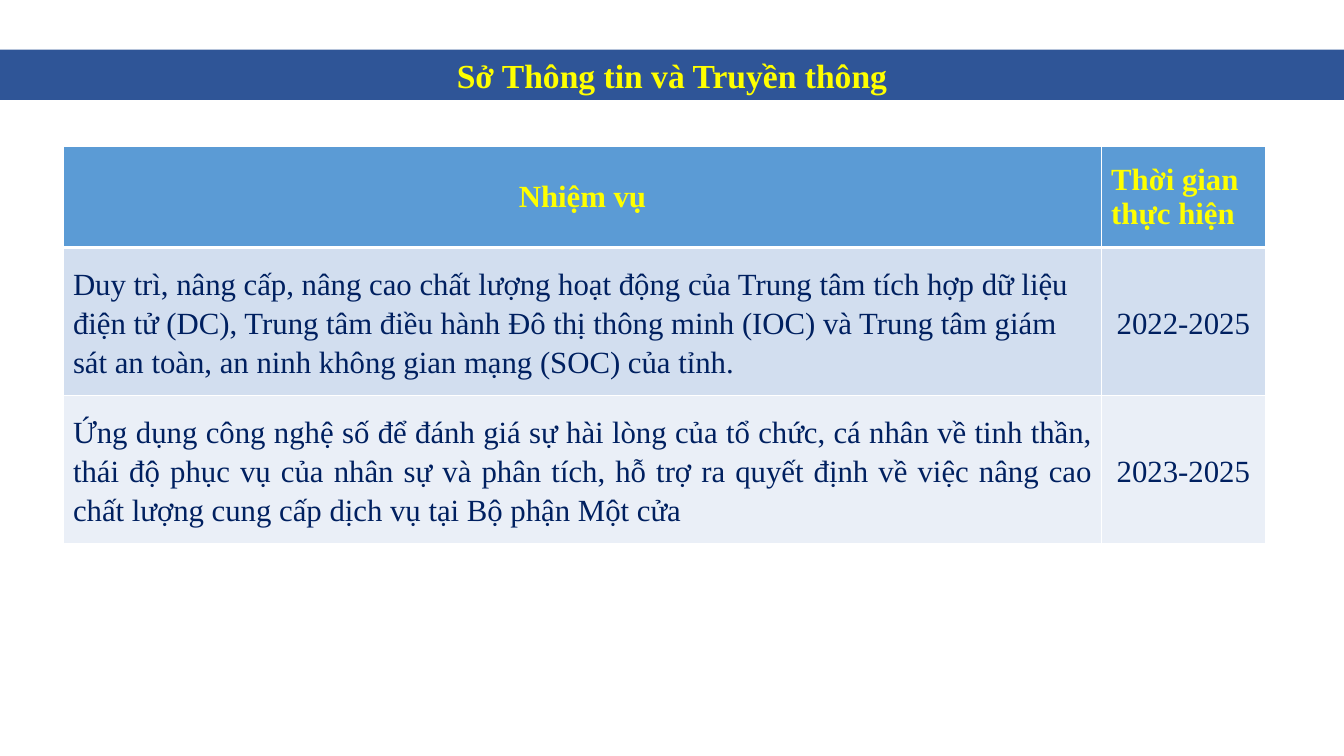
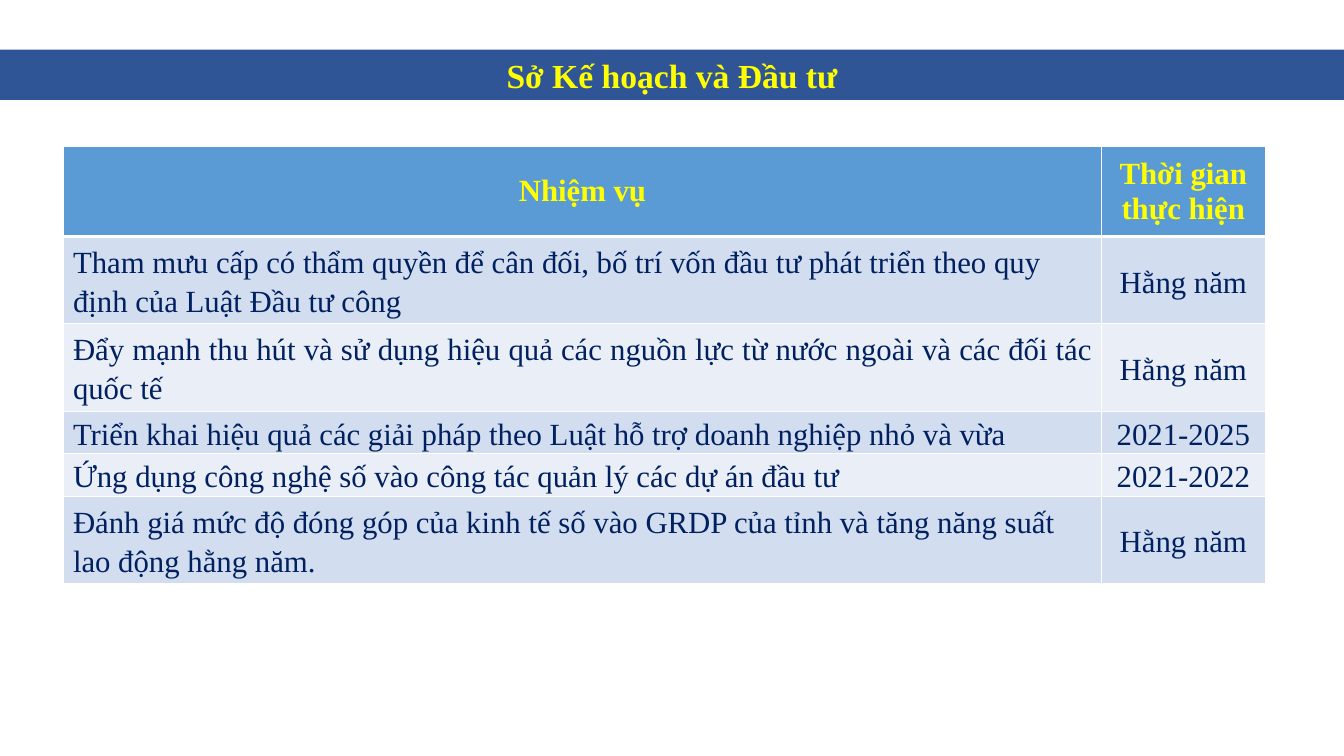
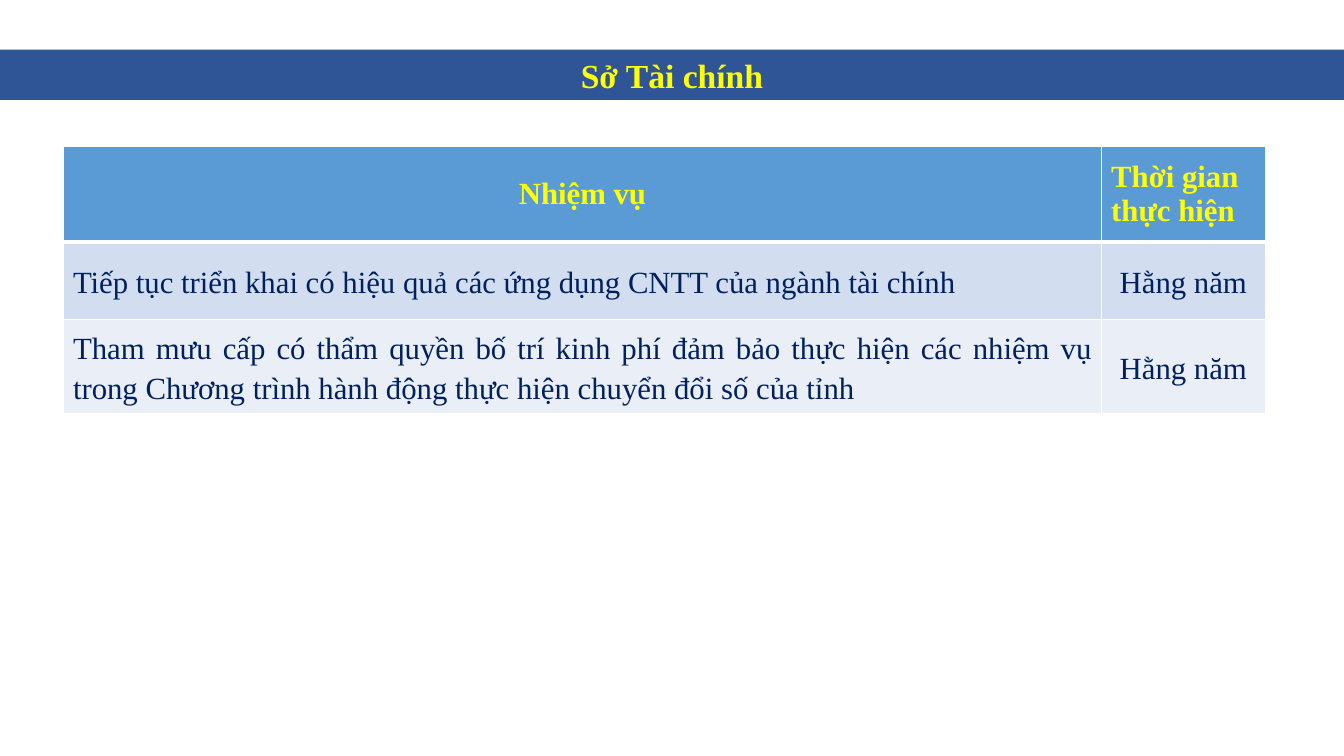
import pptx
import pptx.util
import pptx.dml.color
import pptx.enum.shapes
import pptx.enum.text
import pptx.oxml
import pptx.oxml.ns

Cm = pptx.util.Cm
Pt = pptx.util.Pt
RGBColor = pptx.dml.color.RGBColor
ALIGN = pptx.enum.text.PP_ALIGN
ANCHOR = pptx.enum.text.MSO_ANCHOR

FONT = "Times New Roman"
BAND_BLUE = RGBColor(0x2F, 0x55, 0x97)
HEADER_BLUE = RGBColor(0x5B, 0x9B, 0xD5)
ROW_FILLS = (RGBColor(0xD2, 0xDE, 0xEF), RGBColor(0xEA, 0xEF, 0xF7))
YELLOW = RGBColor(0xFF, 0xFF, 0x00)
GOLD = RGBColor(0xFF, 0xC0, 0x00)
NAVY = RGBColor(0x00, 0x20, 0x60)
WHITE = RGBColor(0xFF, 0xFF, 0xFF)

SLIDE_WIDTH, SLIDE_HEIGHT = Cm(33.87), Cm(19.05)
BAND_BOX = (Cm(0), Cm(1.25), SLIDE_WIDTH, Cm(1.27))
TABLE_LEFT, TABLE_TOP = Cm(1.61), Cm(3.7)
COLUMN_WIDTHS = (Cm(26.14), Cm(4.14))
TASK_MARGIN = Cm(0.23)
HEADINGS = ("Nhiệm vụ", "Thời gian thực hiện")
YEARLY = "Hằng năm"

# Each task: row height in cm, alignment, task, period
DEPARTMENTS = [
    {
        "title": "Sở Thông tin và Truyền thông",
        "header_height": 2.54,
        "period_align": ALIGN.LEFT,
        "tasks": [
            (3.73, ALIGN.LEFT,
             "Duy trì, nâng cấp, nâng cao chất lượng hoạt động của Trung tâm tích hợp "
             "dữ liệu điện tử (DC), Trung tâm điều hành Đô thị thông minh (IOC) và "
             "Trung tâm giám sát an toàn, an ninh không gian mạng (SOC) của tỉnh.",
             "2022-2025"),
            (3.73, ALIGN.JUSTIFY,
             "Ứng dụng công nghệ số để đánh giá sự hài lòng của tổ chức, cá nhân về "
             "tinh thần, thái độ phục vụ của nhân sự và phân tích, hỗ trợ ra quyết "
             "định về việc nâng cao chất lượng cung cấp dịch vụ tại Bộ phận Một cửa",
             "2023-2025"),
        ],
    },
    {
        "title": "Sở Kế hoạch và Đầu tư",
        "header_height": 2.26,
        "period_align": ALIGN.CENTER,
        "tasks": [
            (2.2, ALIGN.LEFT,
             "Tham mưu cấp có thẩm quyền để cân đối, bố trí vốn đầu tư phát triển "
             "theo quy định của Luật Đầu tư công", YEARLY),
            (2.2, ALIGN.JUSTIFY,
             "Đẩy mạnh thu hút và sử dụng hiệu quả các nguồn lực từ nước ngoài và "
             "các đối tác quốc tế", YEARLY),
            (1.07, ALIGN.JUSTIFY,
             "Triển khai hiệu quả các giải pháp theo Luật hỗ trợ doanh nghiệp "
             "nhỏ và vừa", "2021-2025"),
            (1.07, ALIGN.LEFT,
             "Ứng dụng công nghệ số vào công tác quản lý các dự án đầu tư",
             "2021-2022"),
            (2.2, ALIGN.LEFT,
             "Đánh giá mức độ đóng góp của kinh tế số vào GRDP của tỉnh và tăng "
             "năng suất lao động hằng năm.", YEARLY),
        ],
    },
    {
        "title": "Sở Tài chính",
        "header_height": 2.4,
        "period_align": ALIGN.LEFT,
        "tasks": [
            (1.96, ALIGN.LEFT,
             "Tiếp tục triển khai có hiệu quả các ứng dụng CNTT của ngành tài chính",
             YEARLY),
            (2.36, ALIGN.JUSTIFY,
             "Tham mưu cấp có thẩm quyền bố trí kinh phí đảm bảo thực hiện các "
             "nhiệm vụ trong Chương trình hành động thực hiện chuyển đổi số của tỉnh",
             YEARLY),
        ],
    },
]


def line_xml(tag, color, width):
    return pptx.oxml.parse_xml(
        f'<a:{tag} {pptx.oxml.ns.nsdecls("a")} w="{int(Pt(width))}">'
        f'<a:solidFill><a:srgbClr val="{color}"/></a:solidFill></a:{tag}>')


def write(frame, text, size, color, bold, align):
    paragraph = frame.paragraphs[0]
    paragraph.alignment = align
    run = paragraph.add_run()
    run.text = text
    run.font.name = FONT
    run.font.size = Pt(size)
    run.font.bold = bold
    run.font.color.rgb = color
    return run


def add_title_band(slide, box, title):
    band = slide.shapes.add_shape(pptx.enum.shapes.MSO_SHAPE.RECTANGLE, *box)
    band.shadow.inherit = False
    band.fill.solid()
    band.fill.fore_color.rgb = BAND_BLUE
    band.line.fill.background()
    frame = band.text_frame
    frame.word_wrap = True
    frame.auto_size = pptx.enum.text.MSO_AUTO_SIZE.SHAPE_TO_FIT_TEXT
    frame.vertical_anchor = ANCHOR.MIDDLE
    run = write(frame, title, 24, YELLOW, True, ALIGN.CENTER)
    run.font._element.insert(0, line_xml("ln", GOLD, 1))


def style_cell(cell, fill, bottom_width=1, top_width=1):
    properties = cell._tc.get_or_add_tcPr()
    for tag, width in (("lnL", 1), ("lnR", 1), ("lnT", top_width), ("lnB", bottom_width)):
        properties.append(line_xml(tag, WHITE, width))
    cell.fill.solid()
    cell.fill.fore_color.rgb = fill
    cell.vertical_anchor = ANCHOR.MIDDLE


def fill_task_cell(cell, text, align, side_margin):
    cell.margin_top = cell.margin_bottom = 0
    cell.margin_left = cell.margin_right = side_margin
    write(cell.text_frame, text, 22, NAVY, False, align)
    cell.text_frame.paragraphs[0].line_spacing = 1.15


def add_task_table(slide, left, top, department):
    tasks = department["tasks"]
    heights = [Cm(department["header_height"])] + [Cm(task[0]) for task in tasks]
    table = slide.shapes.add_table(
        len(heights), len(COLUMN_WIDTHS), left, top,
        sum(COLUMN_WIDTHS), sum(heights)).table
    for column, width in zip(table.columns, COLUMN_WIDTHS):
        column.width = width
    for row, height in zip(table.rows, heights):
        row.height = height

    header_aligns = (ALIGN.CENTER, department["period_align"])
    for cell, heading, align in zip(table.rows[0].cells, HEADINGS, header_aligns):
        style_cell(cell, HEADER_BLUE, bottom_width=3)
        write(cell.text_frame, heading, 22, YELLOW, True, align)

    for index, (_, align, task, period) in enumerate(tasks):
        task_cell, period_cell = table.rows[index + 1].cells
        for cell in (task_cell, period_cell):
            style_cell(cell, ROW_FILLS[index % 2], top_width=1 if index else 3)
        fill_task_cell(task_cell, task, align, TASK_MARGIN)
        fill_task_cell(period_cell, period, ALIGN.CENTER, 0)


def add_department_slide(deck, department):
    slide = deck.slides.add_slide(deck.slide_layouts[6])
    add_title_band(slide, BAND_BOX, department["title"])
    add_task_table(slide, TABLE_LEFT, TABLE_TOP, department)


def main():
    deck = pptx.Presentation()
    deck.slide_width, deck.slide_height = SLIDE_WIDTH, SLIDE_HEIGHT
    for department in DEPARTMENTS:
        add_department_slide(deck, department)
    deck.save("out.pptx")


if __name__ == "__main__":
    main()
